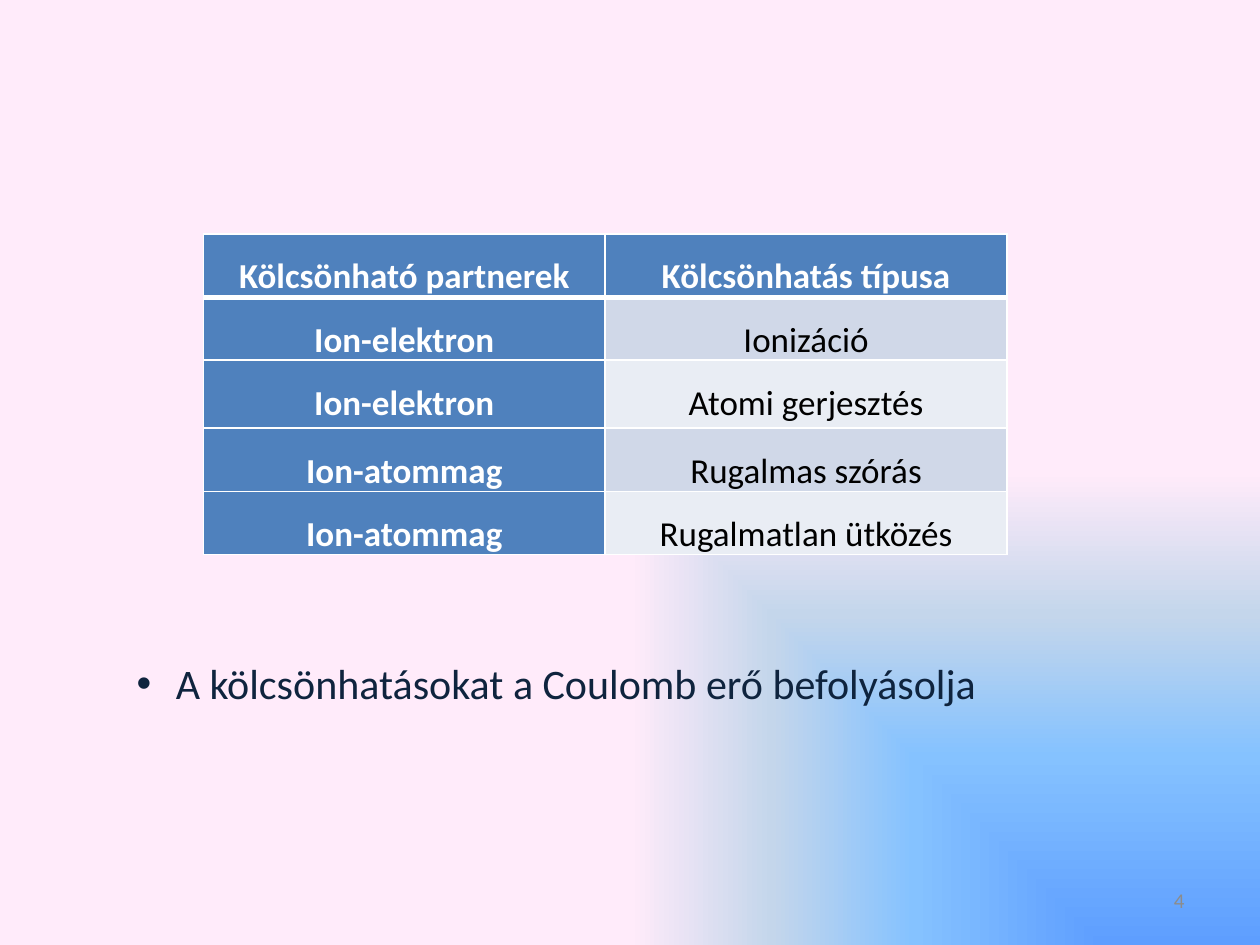
from dataclasses import dataclass

from lxml.etree import SubElement
from pptx import Presentation
from pptx.dml.color import RGBColor
from pptx.enum.text import MSO_ANCHOR as Anchor, MSO_AUTO_SIZE as AutoSize, PP_ALIGN as Align
from pptx.oxml import parse_xml
from pptx.oxml.ns import nsdecls, qn
from pptx.util import Cm, Pt

WHITE = RGBColor(0xFF, 0xFF, 0xFF)
BLACK = RGBColor(0x00, 0x00, 0x00)
BLUE = RGBColor(0x4F, 0x81, 0xBD)
BANDS = (RGBColor(0xD0, 0xD8, 0xE8), RGBColor(0xE9, 0xED, 0xF4))
NAVY = RGBColor(0x0F, 0x24, 0x3E)
GREY = RGBColor(0x8C, 0x8C, 0x8C)
BACKDROP = (
    (0, RGBColor(0x5E, 0x9E, 0xFF)),
    (40, RGBColor(0x85, 0xC2, 0xFF)),
    (70, RGBColor(0xC4, 0xD6, 0xEB)),
    (100, RGBColor(0xFF, 0xEB, 0xFA)),
)
FONT = "Calibri"


@dataclass
class Interaction:
    partners: str
    kind: str
    height: float = 1.14


INTERACTIONS = (
    Interaction("Kölcsönható partnerek", "Kölcsönhatás típusa"),
    Interaction("Ion-elektron", "Ionizáció"),
    Interaction("Ion-elektron", "Atomi gerjesztés", 1.37),
    Interaction("Ion-atommag", "Rugalmas szórás"),
    Interaction("Ion-atommag", "Rugalmatlan ütközés"),
)


def apply(target, values: dict) -> None:
    for name, value in values.items():
        setattr(target, name, value)


def write(paragraph, text: str, size: int, color: RGBColor, bold: bool = False) -> None:
    span = paragraph.add_run()
    span.text = text
    apply(span.font, {"name": FONT, "size": Pt(size), "bold": bold})
    span.font.color.rgb = color


def paint_backdrop(page) -> None:
    stops = "".join(
        f'<a:gs pos="{place * 1000}"><a:srgbClr val="{color}"/></a:gs>'
        for place, color in BACKDROP
    )
    background = parse_xml(
        f'<p:bg {nsdecls("p", "a")}><p:bgPr><a:gradFill rotWithShape="1">'
        f'<a:gsLst>{stops}</a:gsLst><a:path path="rect">'
        '<a:fillToRect l="100000" t="100000"/></a:path>'
        '<a:tileRect r="-100000" b="-100000"/></a:gradFill>'
        "<a:effectLst/></p:bgPr></p:bg>"
    )
    page.element.cSld.insert(0, background)


def border(cell, top: int, bottom: int) -> None:
    properties = cell._tc.get_or_add_tcPr()
    for side, width in {"L": 1, "R": 1, "T": top, "B": bottom}.items():
        line = SubElement(properties, qn(f"a:ln{side}"), w=str(Pt(width)))
        fill = SubElement(line, qn("a:solidFill"))
        SubElement(fill, qn("a:srgbClr"), val=str(WHITE))


def fill_cell(cell, text: str, row: int, column: int) -> None:
    heading = row == 0 or column == 0
    border(cell, 3 if row == 1 else 1, 3 if row == 0 else 1)
    cell.fill.solid()
    cell.fill.fore_color.rgb = BLUE if heading else BANDS[(row - 1) % 2]
    apply(cell, {"margin_left": Cm(0.18), "margin_right": Cm(0.18),
                 "margin_top": 0, "margin_bottom": 0})
    para = cell.text_frame.paragraphs[0]
    apply(para, {"alignment": Align.CENTER, "line_spacing": 1.5})
    write(para, text, 20, WHITE if heading else BLACK, heading)


def add_interactions(page) -> None:
    height = sum(item.height for item in INTERACTIONS)
    table = page.shapes.add_table(
        len(INTERACTIONS), 2, Cm(4.1), Cm(4.72), Cm(16.2), Cm(height)
    ).table
    for row, item in enumerate(INTERACTIONS):
        table.rows[row].height = Cm(item.height)
        for column, text in enumerate((item.partners, item.kind)):
            fill_cell(table.cell(row, column), text, row, column)


def add_page_number(page) -> None:
    box = page.shapes.add_textbox(Cm(18.2), Cm(17.65), Cm(5.93), Cm(1.01))
    apply(box.text_frame, {"word_wrap": True, "vertical_anchor": Anchor.MIDDLE})
    para = box.text_frame.paragraphs[0]
    para.alignment = Align.RIGHT
    write(para, "4", 12, GREY)


def fill_body(page) -> None:
    body = page.placeholders[1]
    apply(body, {"left": Cm(2.5), "top": Cm(13.13), "width": Cm(18), "height": Cm(1.28)})
    apply(body.text_frame, {"word_wrap": True, "auto_size": AutoSize.SHAPE_TO_FIT_TEXT})
    para = body.text_frame.paragraphs[0]
    para.space_before = Pt(0)
    write(para, "A kölcsönhatásokat a Coulomb erő befolyásolja", 24, NAVY)
    properties = para._p.get_or_add_pPr()
    properties.set("marL", str(Cm(0.79)))
    properties.set("indent", str(-Cm(0.79)))
    SubElement(properties, qn("a:buFont"), typeface="Arial")
    SubElement(properties, qn("a:buChar"), char="•")


def main() -> None:
    deck = Presentation()
    apply(deck, {"slide_width": Cm(25.4), "slide_height": Cm(19.05)})
    page = deck.slides.add_slide(deck.slide_layouts[1])
    title = page.shapes.title.element
    title.getparent().remove(title)
    paint_backdrop(page)
    add_interactions(page)
    add_page_number(page)
    fill_body(page)
    deck.save("out.pptx")


if __name__ == "__main__":
    main()
